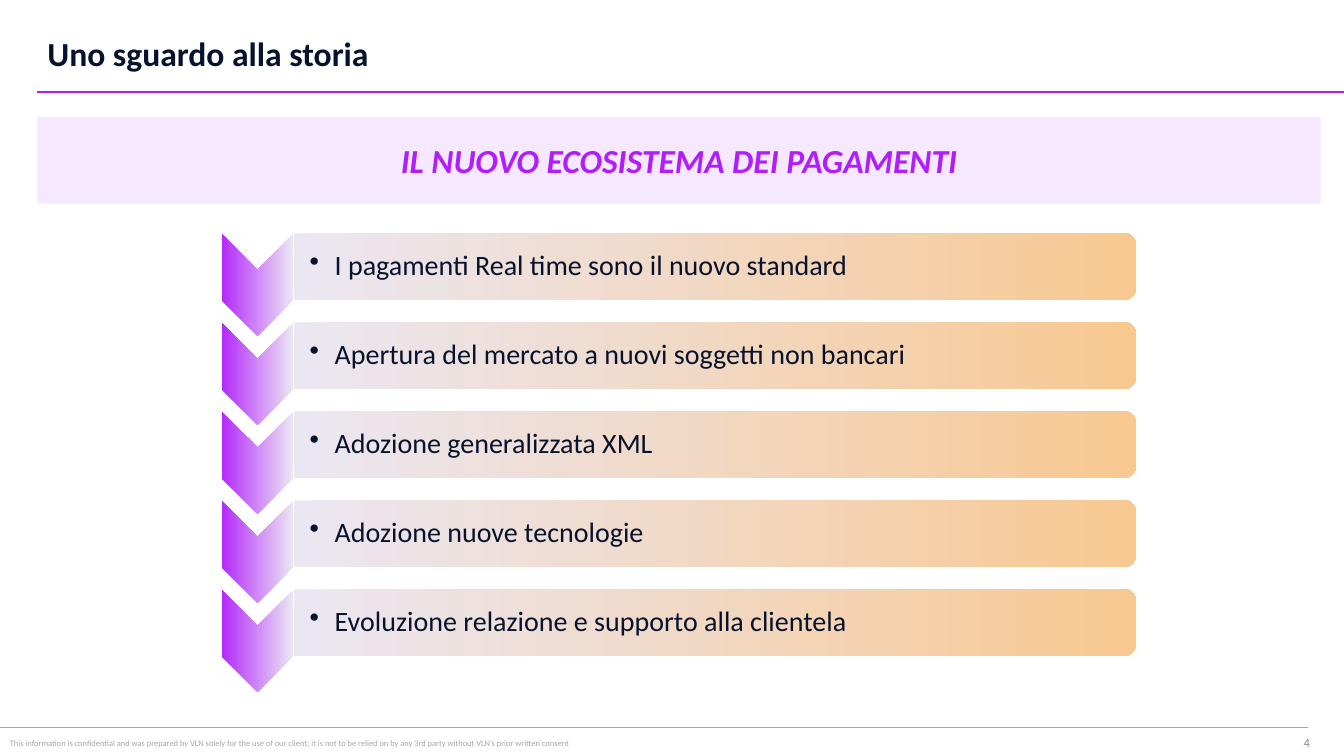
from lxml import etree
from pptx import Presentation
from pptx.dml.color import RGBColor
from pptx.enum import shapes, text
from pptx.oxml.ns import qn
from pptx.util import Inches, Pt

INK = "07122D"
PURPLE = "B01EFB"
GREY = "A6A6A6"
MIST = "EBE7F2"

TRENDS = [
    "I pagamenti Real time sono il nuovo standard",
    "Apertura del mercato a nuovi soggetti non bancari",
    "Adozione generalizzata XML",
    "Adozione nuove tecnologie",
    "Evoluzione relazione e supporto alla clientela",
]
FIRST_ROW, ROW_PITCH = 2.35, 0.883
CONFIDENTIAL = (
    "This information is confidential and was prepared by VLN solely for the use of our client; "
    "it is not to be relied on by any 3rd party without VLN’s prior written consent"
)


def rgb(value):
    return RGBColor.from_string(value)


def place(item, left, top, width, height):
    item.left, item.top = Inches(left), Inches(top)
    item.width, item.height = Inches(width), Inches(height)


def write(item, words, size, color, bold=False, italic=False,
          align=text.PP_ALIGN.LEFT, anchor=text.MSO_ANCHOR.MIDDLE):
    frame = item.text_frame
    frame.word_wrap = True
    frame.vertical_anchor = anchor
    frame.text = words
    line = frame.paragraphs[0]
    line.alignment = align
    font = line.font
    font.name, font.size = "Calibri", Pt(size)
    font.bold, font.italic = bold, italic
    font.color.rgb = rgb(color)
    return line


def add_label(slide, box, words, size, color, **style):
    label = slide.shapes.add_textbox(*map(Inches, box))
    write(label, words, size, color, **style)
    return label


def add_rule(slide, start, end, y, color, width):
    rule = slide.shapes.add_connector(
        shapes.MSO_CONNECTOR.STRAIGHT, Inches(start), Inches(y), Inches(end), Inches(y))
    rule.line.color.rgb = rgb(color)
    rule.line.width = Pt(width)
    etree.SubElement(rule._element.spPr, qn("a:effectLst"))


def add_plain_shape(slide, kind, box):
    shape = slide.shapes.add_shape(kind, *map(Inches, box))
    shape.shadow.inherit = False
    shape.line.fill.background()
    return shape


def add_turned_shape(slide, kind, box, end_color, angle):
    """A shape turned by 90 degrees, shaded from MIST to end_color."""
    shape = add_plain_shape(slide, kind, box)
    shape.rotation = 90
    shape.fill.gradient()
    shape.fill.gradient_angle = angle
    for stop, color in zip(shape.fill.gradient_stops, (MIST, end_color)):
        stop.color.rgb = rgb(color)


def add_banner(slide, words):
    banner = add_plain_shape(slide, shapes.MSO_SHAPE.RECTANGLE, (0.37, 1.16, 12.73, 0.86))
    banner.fill.solid()
    banner.fill.fore_color.rgb = rgb("EFD2FE")
    tint = banner._element.spPr.find(qn("a:solidFill"))[0]
    etree.SubElement(tint, qn("a:alpha"), val="50000")
    write(banner, words, 24, PURPLE, bold=True, italic=True, align=text.PP_ALIGN.CENTER)


def add_bullet(paragraph):
    properties = paragraph._p.get_or_add_pPr()
    properties.set("marL", str(Inches(0.25)))
    properties.set("indent", str(-Inches(0.25)))
    bullet = etree.Element(qn("a:buChar"), char="•")
    # The bullet goes before the default run properties
    properties.find(qn("a:defRPr")).addprevious(bullet)


def add_trend(slide, top, words):
    add_turned_shape(slide, shapes.MSO_SHAPE.CHEVRON,
                     (2.05, top + 0.12, 1.01, 0.71), "B42AFB", 270)
    add_turned_shape(slide, shapes.MSO_SHAPE.ROUND_2_SAME_RECTANGLE,
                     (6.76, top - 3.88, 0.66, 8.35), "F8C891", 90)
    label = add_label(slide, (2.91, top, 8.32, 0.59), words, 20, INK)
    frame = label.text_frame
    frame.margin_left = Inches(0.16)
    frame.margin_right = frame.margin_top = frame.margin_bottom = Inches(0.01)
    line = frame.paragraphs[0]
    line.line_spacing = 0.9
    add_bullet(line)


def main():
    deck = Presentation()
    deck.slide_width, deck.slide_height = Inches(13.33), Inches(7.5)
    slide = deck.slides.add_slide(deck.slide_layouts[5])

    # Heading
    add_rule(slide, 0.37, 13.33, 0.91, PURPLE, 1.5)
    title = slide.shapes.title
    place(title, 0.37, 0.19, 11.99, 0.73)
    write(title, "Uno sguardo alla storia", 24, INK, bold=True).line_spacing = 0.9
    add_banner(slide, "IL NUOVO ECOSISTEMA DEI PAGAMENTI")

    # Trends, one row each
    for row, words in enumerate(TRENDS):
        add_trend(slide, FIRST_ROW + row * ROW_PITCH, words)

    # Footer
    add_rule(slide, 0, 12.97, 7.22, GREY, 0.75)
    add_label(slide, (0, 7.27, 6.8, 0.3), CONFIDENTIAL, 6, GREY, anchor=text.MSO_ANCHOR.TOP)
    add_label(slide, (10.09, 7.17, 3, 0.4), "4", 9, "8C8C8F", align=text.PP_ALIGN.RIGHT)

    deck.save("out.pptx")


if __name__ == "__main__":
    main()
